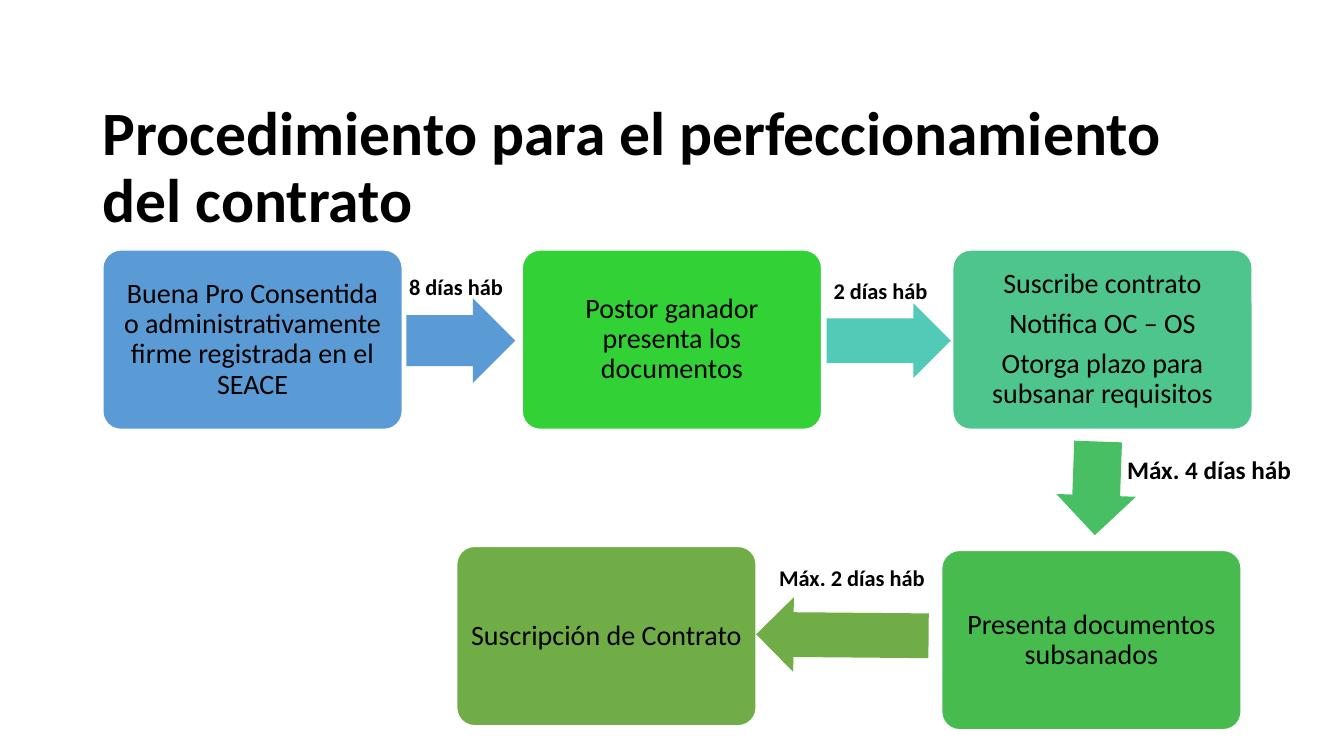
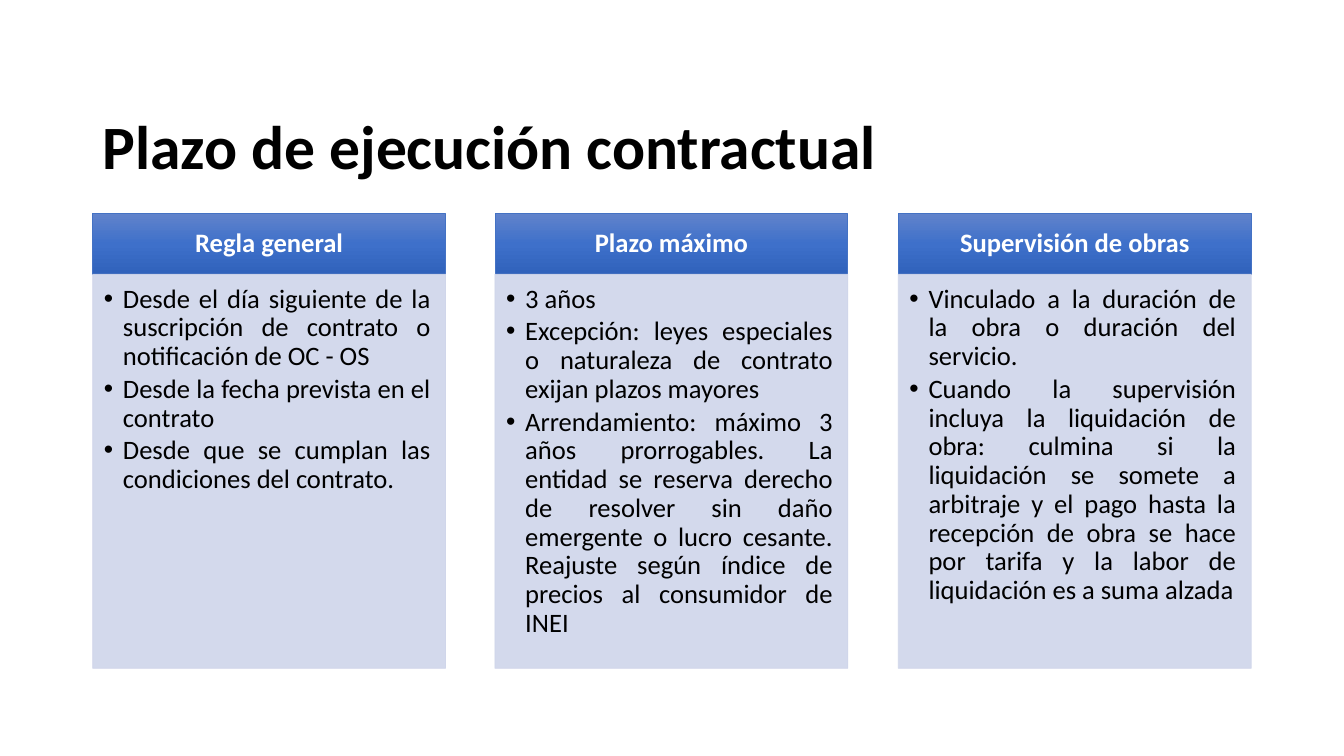
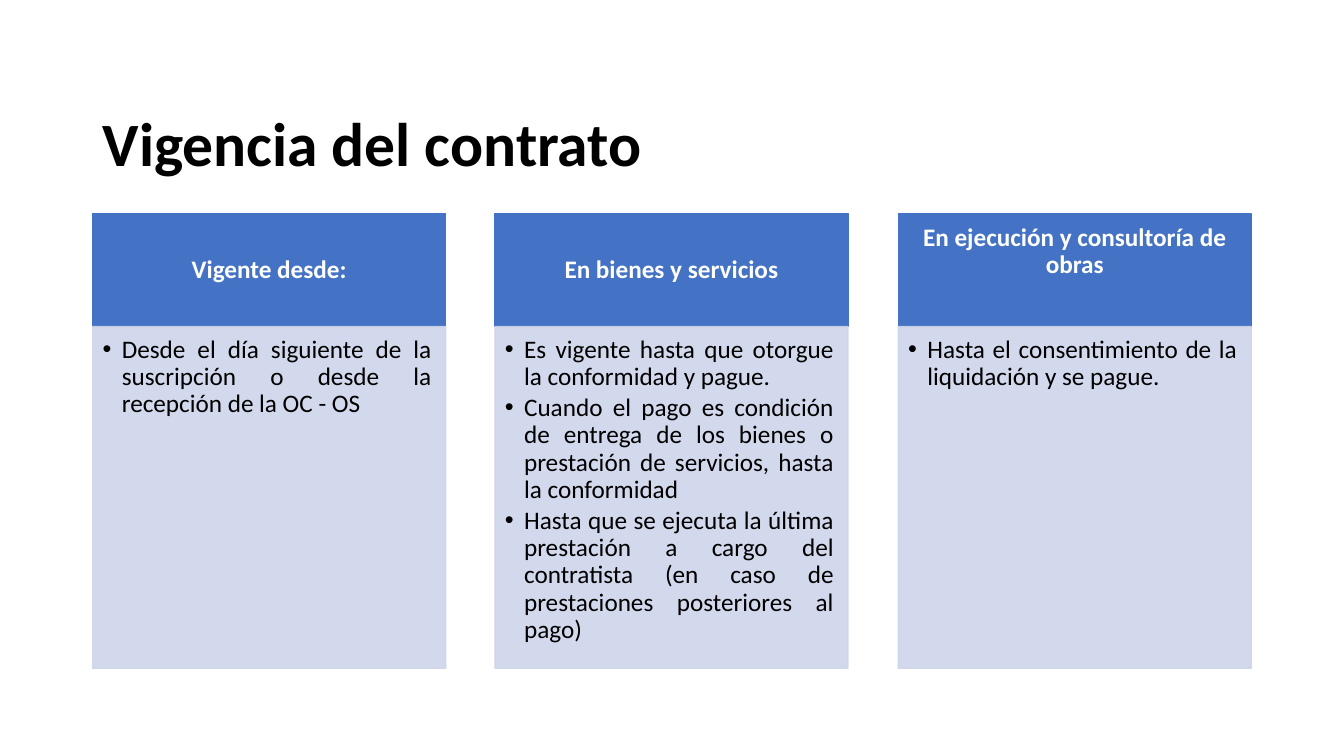
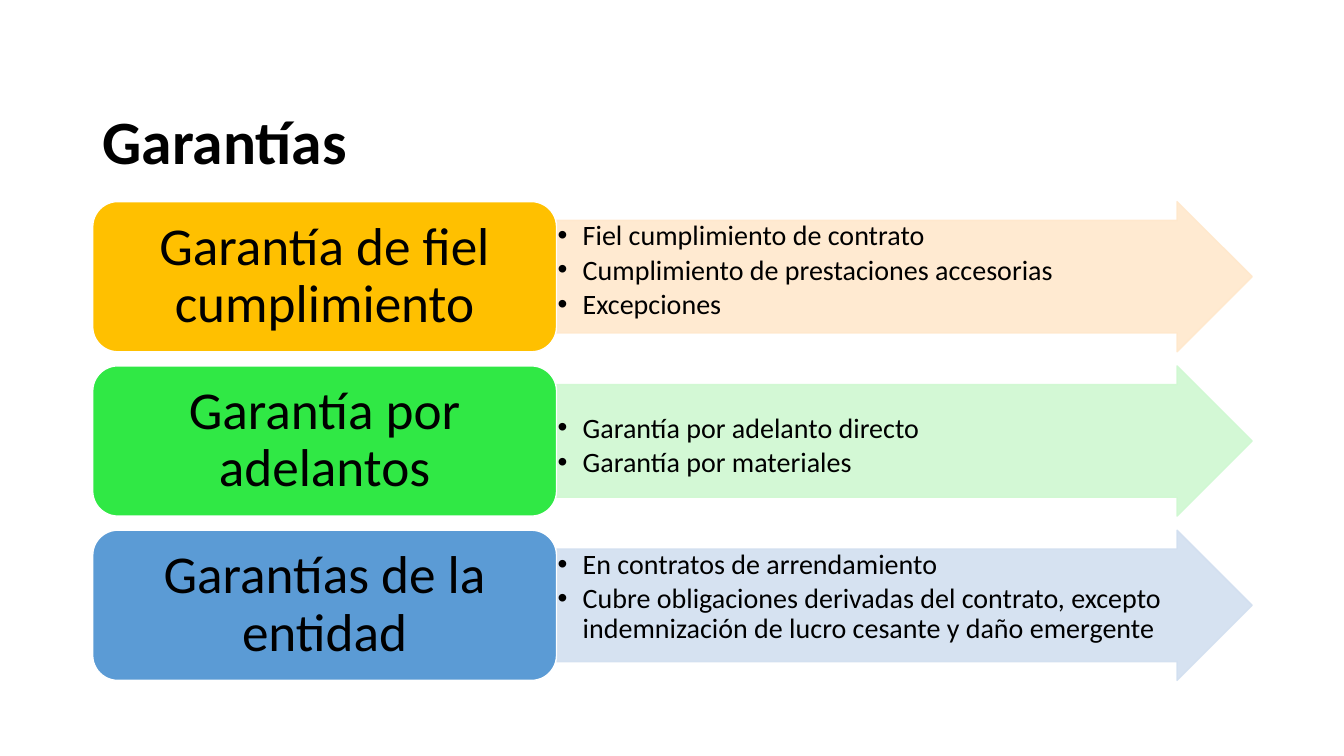
from dataclasses import dataclass, replace
from typing import Optional

from lxml import etree
from pptx import Presentation
from pptx import util as u
from pptx.dml.color import RGBColor
from pptx.enum import shapes, text
from pptx.oxml.ns import qn

EMU_PER_PX = 9144
FONT = "Calibri"
COLOURS = {
    "black": "000000",
    "white": "FFFFFF",
    "blue": "5B9BD5",
    "green": "32D236",
    "turquoise": "52CAB8",
    "mint": "4DC58D",
    "emerald": "49BF64",
    "leaf": "48BB4F",
    "olive": "70AD47",
    "header": "4472C4",
    "header_top": "6183CB",
    "header_middle": "3E70CA",
    "header_bottom": "3062BB",
    "column": "CFD5EA",
    "gold": "FFC000",
    "lime": "30E845",
    "pale_gold": "FFE8CC",
    "pale_lime": "CFF8D1",
    "pale_blue": "D2DFF0",
}
HEADER_GRADIENT = ((0, "header_top"), (50, "header_middle"), (100, "header_bottom"))
SHAPE = shapes.MSO_SHAPE
ALIGN = text.PP_ALIGN
ANCHOR = text.MSO_ANCHOR
CONTENT_LEFT, CONTENT_RIGHT = 92, 1241


@dataclass(frozen=True)
class Box:
    left: int
    top: int
    width: int
    height: int


@dataclass(frozen=True)
class TextStyle:
    size: int
    colour: str = "black"
    bold: bool = False
    align: ALIGN = ALIGN.LEFT
    anchor: ANCHOR = ANCHOR.TOP
    line_spacing: float = 0.9
    after: float = 0
    indent: int = 0
    insets: tuple[int, int, int, int] = (10, 5, 10, 5)


@dataclass(frozen=True)
class Step:
    left: int
    top: int
    colour: str
    lines: tuple[str, ...]
    side_inset: int = 8


@dataclass(frozen=True)
class Arrow:
    box: Box
    colour: str
    rotation: float = 0


@dataclass(frozen=True)
class Label:
    box: Box
    wording: str
    size: int = 16


@dataclass(frozen=True)
class Column:
    heading: str
    points: tuple[str, ...]
    bottom_inset: int = 8


@dataclass(frozen=True)
class ColumnLook:
    header_height: int
    size: int
    side_inset: int
    body_insets: tuple[int, int, int, int]
    line_width: float
    gradient: bool = False


@dataclass(frozen=True)
class Guarantee:
    heading: str
    colour: str
    arrow_colour: str
    points: tuple[str, ...]
    top_inset: int = 1


TITLE = TextStyle(44, bold=True, anchor=ANCHOR.MIDDLE)
STEP_TEXT = TextStyle(20, align=ALIGN.CENTER, anchor=ANCHOR.MIDDLE, after=0.35)
GUARANTEE_TEXT = replace(STEP_TEXT, size=38, insets=(16, 8, 16, 8))
GUARANTEE_POINTS = TextStyle(20, after=0.15, indent=25)

STEPS = (
    Step(102, 248, "blue",
         ("Buena Pro Consentida o administrativamente firme registrada en el SEACE",),
         side_inset=12),
    Step(518, 248, "green", ("Postor ganador presenta los documentos",)),
    Step(945, 248, "mint", ("Suscribe contrato", "Notifica OC – OS",
                            "Otorga plazo para subsanar requisitos")),
    Step(934, 546, "leaf", ("Presenta documentos subsanados",)),
    Step(453, 542, "olive", ("Suscripción de Contrato",)),
)
ARROWS = (
    Arrow(Box(403, 296, 108, 84), "blue"),
    Arrow(Box(820, 301, 123, 74), "turquoise"),
    Arrow(Box(1041, 445, 93, 79), "emerald", 92),
    Arrow(Box(750, 593, 171, 74), "olive", 180.5),
)
LABELS = (
    Label(Box(396, 266, 120, 37), "8 días háb"),
    Label(Box(817, 270, 150, 37), "2 días háb"),
    Label(Box(1108, 446, 190, 40), "Máx. 4 días háb", 18),
    Label(Box(763, 555, 170, 37), "Máx. 2 días háb"),
)
TERM_LOOK = ColumnLook(60, 19, 15, (11, 11, 15, 17), 0.5, gradient=True)
TERM_COLUMNS = (
    Column("Regla general", (
        "Desde el día siguiente de la suscripción de contrato o notificación de OC - OS",
        "Desde la fecha prevista en el contrato",
        "Desde que se cumplan las condiciones del contrato.",
    )),
    Column("Plazo máximo", (
        "3 años",
        "Excepción: leyes especiales o naturaleza de contrato exijan plazos mayores",
        "Arrendamiento: máximo 3 años prorrogables. La entidad se reserva derecho de "
        "resolver sin daño emergente o lucro cesante. Reajuste según índice de precios "
        "al consumidor de INEI",
    )),
    Column("Supervisión de obras", (
        "Vinculado a la duración de la obra o duración del servicio.",
        "Cuando la supervisión incluya la liquidación de obra: culmina si la liquidación "
        "se somete a arbitraje y el pago hasta la recepción de obra se hace por tarifa y "
        "la labor de liquidación es a suma alzada",
    )),
)
VALIDITY_LOOK = ColumnLook(112, 18, 14, (10, 10, 14, 16), 1)
VALIDITY_COLUMNS = (
    Column("Vigente desde:", (
        "Desde el día siguiente de la suscripción o desde la recepción de la OC - OS",
    )),
    Column("En bienes y servicios", (
        "Es vigente hasta que otorgue la conformidad y pague.",
        "Cuando el pago es condición de entrega de los bienes o prestación de servicios, "
        "hasta la conformidad",
        "Hasta que se ejecuta la última prestación a cargo del contratista (en caso de "
        "prestaciones posteriores al pago)",
    )),
    Column("En ejecución y consultoría de obras", (
        "Hasta el consentimiento de la liquidación y se pague.",
    ), bottom_inset=44),
)
GUARANTEES = (
    Guarantee("Garantía de fiel cumplimiento", "gold", "pale_gold", (
        "Fiel cumplimiento de contrato",
        "Cumplimiento de prestaciones accesorias",
        "Excepciones",
    )),
    Guarantee("Garantía por adelantos", "lime", "pale_lime", (
        "Garantía por adelanto directo",
        "Garantía por materiales",
    ), top_inset=29),
    Guarantee("Garantías de la entidad", "blue", "pale_blue", (
        "En contratos de arrendamiento",
        "Cubre obligaciones derivadas del contrato, excepto indemnización de lucro "
        "cesante y daño emergente",
    )),
)


def px(length: int) -> u.Emu:
    return u.Emu(length * EMU_PER_PX)


def rgb(name: str) -> RGBColor:
    return RGBColor.from_string(COLOURS[name])


def place(box: Box) -> tuple[u.Emu, ...]:
    return px(box.left), px(box.top), px(box.width), px(box.height)


def add_bullet(paragraph, indent: int) -> None:
    properties = paragraph._p.get_or_add_pPr()
    properties.set("marL", str(px(indent)))
    properties.set("indent", str(-px(indent)))
    etree.SubElement(properties, qn("a:buFont"), typeface="Arial")
    etree.SubElement(properties, qn("a:buChar"), char="•")


def write(shape, lines: tuple[str, ...], style: TextStyle) -> None:
    frame = shape.text_frame
    frame.word_wrap = True
    frame.vertical_anchor = style.anchor
    (frame.margin_left, frame.margin_top,
     frame.margin_right, frame.margin_bottom) = map(px, style.insets)
    for index, line in enumerate(lines):
        paragraph = frame.add_paragraph() if index else frame.paragraphs[0]
        if style.indent:
            add_bullet(paragraph, style.indent)
        paragraph.alignment = style.align
        paragraph.line_spacing = style.line_spacing
        paragraph.space_after = u.Pt(round(style.size * style.after, 2))
        run = paragraph.add_run()
        run.text = line
        run.font.name = FONT
        run.font.size = u.Pt(style.size)
        run.font.bold = style.bold
        run.font.color.rgb = rgb(style.colour)


def add_text(slide, box: Box, wording: str, style: TextStyle) -> None:
    write(slide.shapes.add_textbox(*place(box)), (wording,), style)


def add_block(slide, kind: SHAPE, box: Box, fill: str, line: Optional[str] = None,
              line_width: float = 1, adjustments: tuple[float, ...] = (),
              opacity: int = 100):
    shape = slide.shapes.add_shape(kind, *place(box))
    shape.shadow.inherit = False
    for index, value in enumerate(adjustments):
        shape.adjustments[index] = value
    shape.fill.solid()
    shape.fill.fore_color.rgb = rgb(fill)
    if line:
        shape.line.color.rgb = rgb(line)
        shape.line.width = u.Pt(line_width)
    else:
        shape.line.fill.background()
    if opacity < 100:
        for colour in shape._element.spPr.iter(qn("a:srgbClr")):
            etree.SubElement(colour, qn("a:alpha"), val=str(opacity * 1000))
    return shape


def apply_gradient(shape, stops: tuple[tuple[int, str], ...]) -> None:
    shape.fill.gradient()
    shape.fill.gradient_angle = 270
    stop_list = shape._element.spPr.find(qn("a:gradFill")).find(qn("a:gsLst"))
    for stop in list(stop_list):
        stop_list.remove(stop)
    for position, name in stops:
        stop = etree.SubElement(stop_list, qn("a:gs"), pos=str(position * 1000))
        etree.SubElement(stop, qn("a:srgbClr"), val=COLOURS[name])


def add_slide(presentation, title: str, top: int, height: int = 145):
    slide = presentation.slides.add_slide(presentation.slide_layouts[6])
    add_text(slide, Box(CONTENT_LEFT, top, 1150, height), title, TITLE)
    return slide


def draw_process(slide) -> None:
    for step in STEPS:
        shape = add_block(slide, SHAPE.ROUNDED_RECTANGLE,
                          Box(step.left, step.top, 297, 178), step.colour,
                          "white", adjustments=(0.1,))
        write(shape, step.lines,
              replace(STEP_TEXT, insets=(step.side_inset, 8, step.side_inset, 8)))
    for arrow in ARROWS:
        shape = add_block(slide, SHAPE.RIGHT_ARROW, arrow.box, arrow.colour,
                          adjustments=(0.6, 0.5))
        shape.rotation = arrow.rotation
    for label in LABELS:
        add_text(slide, label.box, label.wording,
                 TextStyle(label.size, bold=True, line_spacing=1))


def draw_columns(slide, columns: tuple[Column, ...], look: ColumnLook) -> None:
    top, bottom, width = 212, 663, 350
    travel = CONTENT_RIGHT - CONTENT_LEFT - width
    body_top = top + look.header_height
    for index, column in enumerate(columns):
        left = CONTENT_LEFT + index * travel // (len(columns) - 1)
        header = add_block(slide, SHAPE.RECTANGLE,
                           Box(left, top, width, look.header_height),
                           "header", "header", look.line_width)
        if look.gradient:
            apply_gradient(header, HEADER_GRADIENT)
        write(header, (column.heading,), TextStyle(
            look.size, "white", True, ALIGN.CENTER, ANCHOR.MIDDLE, after=0.35,
            insets=(look.side_inset, 8, look.side_inset, column.bottom_inset)))
        body = add_block(slide, SHAPE.RECTANGLE,
                         Box(left, body_top, width, bottom - body_top),
                         "column", "column", look.line_width, opacity=90)
        write(body, column.points, TextStyle(
            look.size, align=ALIGN.JUSTIFY, after=0.15, indent=19,
            insets=look.body_insets))


def draw_guarantees(slide) -> None:
    top, height, gap, heading_width = 200, 149, 14, 460
    arrow_left = CONTENT_LEFT + heading_width
    for index, guarantee in enumerate(GUARANTEES):
        row_top = top + index * (height + gap)
        arrow = add_block(slide, SHAPE.RIGHT_ARROW,
                          Box(arrow_left, row_top, 690, height),
                          guarantee.arrow_colour, guarantee.arrow_colour,
                          adjustments=(0.75, 0.5), opacity=90)
        write(arrow, guarantee.points,
              replace(GUARANTEE_POINTS, insets=(1, guarantee.top_inset, 1, 1)))
        heading = add_block(slide, SHAPE.ROUNDED_RECTANGLE,
                            Box(CONTENT_LEFT, row_top, heading_width, height),
                            guarantee.colour, "white")
        write(heading, (guarantee.heading,), GUARANTEE_TEXT)


def main() -> None:
    presentation = Presentation()
    presentation.slide_width = px(1333)
    presentation.slide_height = px(750)
    draw_process(add_slide(
        presentation, "Procedimiento para el perfeccionamiento del contrato", 95))
    draw_columns(add_slide(presentation, "Plazo de ejecución contractual", 76),
                 TERM_COLUMNS, TERM_LOOK)
    draw_columns(add_slide(presentation, "Vigencia del contrato", 73),
                 VALIDITY_COLUMNS, VALIDITY_LOOK)
    draw_guarantees(add_slide(presentation, "Garantías", 81, 125))
    presentation.save("out.pptx")


if __name__ == "__main__":
    main()
